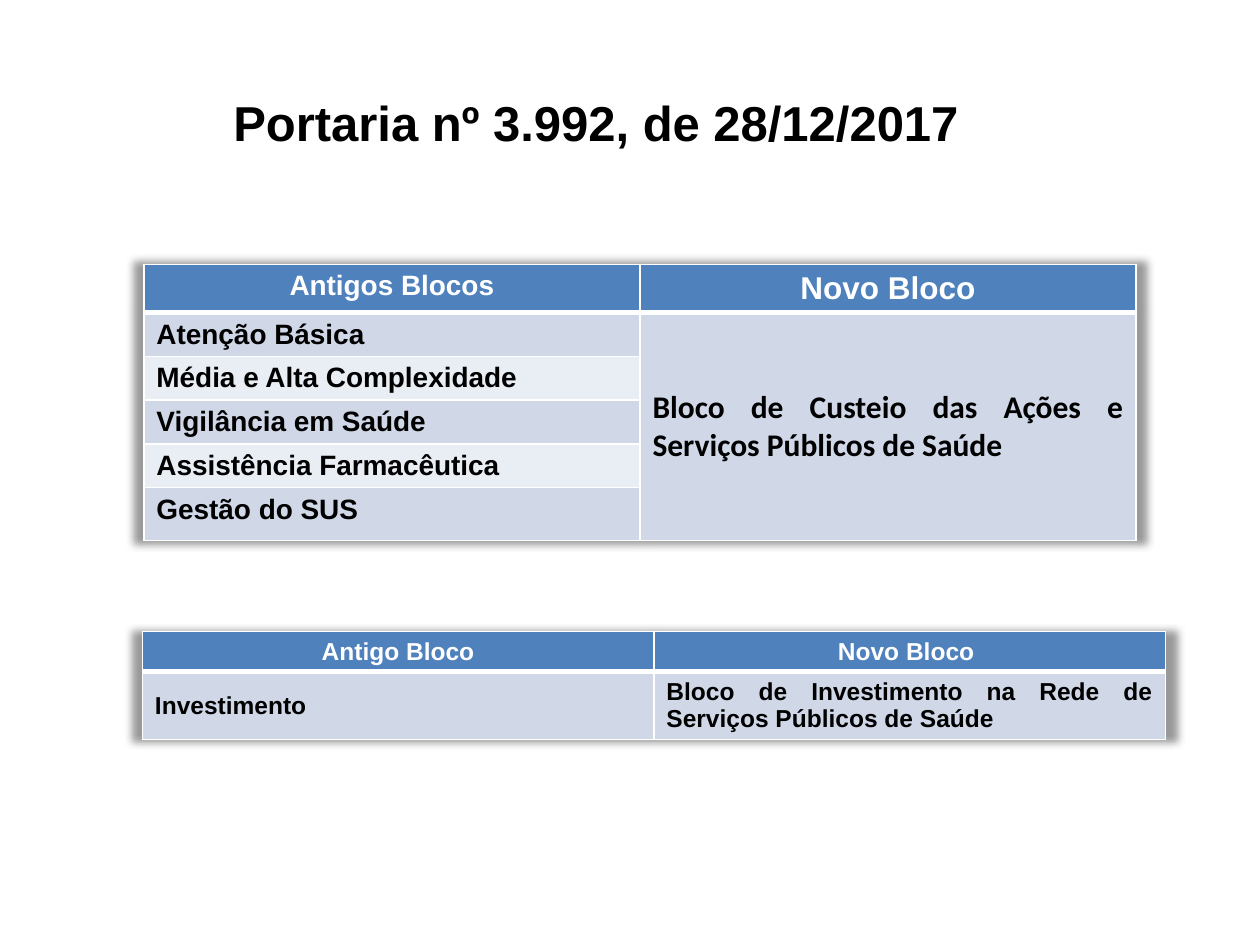
from lxml.etree import SubElement
from pptx import Presentation
from pptx.dml.color import RGBColor
from pptx.enum.text import MSO_ANCHOR, PP_ALIGN
from pptx.oxml import parse_xml
from pptx.oxml.ns import qn
from pptx.util import Cm, Pt

WHITE = RGBColor(0xFF, 0xFF, 0xFF)
BLACK = RGBColor(0x00, 0x00, 0x00)
HEADER_BLUE = RGBColor(0x4F, 0x81, 0xBD)
BAND_DARK = RGBColor(0xD0, 0xD8, 0xE8)
BAND_LIGHT = RGBColor(0xE9, 0xED, 0xF4)

TABLE_SHADOW = (
    '<a:effectLst xmlns:a="http://schemas.openxmlformats.org/drawingml/2006/main">'
    '<a:outerShdw blurRad="63500" sx="102000" sy="102000" algn="ctr" rotWithShape="0">'
    '<a:srgbClr val="000000"><a:alpha val="40000"/></a:srgbClr>'
    '</a:outerShdw></a:effectLst>'
)


def format_text(paragraph, size, color, align=PP_ALIGN.LEFT, font="Arial"):
    paragraph.alignment = align
    for span in paragraph.runs:
        span.font.name = font
        span.font.size = Pt(size)
        span.font.bold = True
        span.font.color.rgb = color


def set_borders(cell, top, bottom):
    """White cell borders; top and bottom widths in points."""
    properties = cell._tc.get_or_add_tcPr()
    for side, width in (("L", 1), ("R", 1), ("T", top), ("B", bottom)):
        line = SubElement(properties, qn(f"a:ln{side}"), w=str(Pt(width)))
        fill = SubElement(line, qn("a:solidFill"))
        SubElement(fill, qn("a:srgbClr"), val=str(WHITE))


def add_title(page, text):
    title = page.shapes.title
    title.left, title.top = Cm(4.45), Cm(1.73)
    title.width, title.height = Cm(15.29), Cm(1.45)
    title.text_frame.text = text
    title.text_frame.word_wrap = False
    format_text(title.text_frame.paragraphs[0], 28, BLACK)


def add_block_table(page, left, top, column_width, heights, rows, size):
    """Two-column table with a blue header row and banded body rows."""
    frame = page.shapes.add_table(
        len(rows), 2, Cm(left), Cm(top), Cm(2 * column_width), Cm(sum(heights)))
    table = frame.table
    table._tbl.tblPr.insert(0, parse_xml(TABLE_SHADOW))
    for column in table.columns:
        column.width = Cm(column_width)

    for index, (height, texts) in enumerate(zip(heights, rows)):
        table.rows[index].height = Cm(height)
        header = index == 0
        band = BAND_DARK if index % 2 else BAND_LIGHT
        for column, text in enumerate(texts):
            cell = table.cell(index, column)
            set_borders(cell, 3 if index == 1 else 1, 3 if header else 1)
            cell.fill.solid()
            cell.fill.fore_color.rgb = HEADER_BLUE if header else band
            cell.text_frame.text = text
            if header:
                align = PP_ALIGN.CENTER
            else:
                align = PP_ALIGN.JUSTIFY if column else PP_ALIGN.LEFT
            format_text(cell.text_frame.paragraphs[0], size,
                        WHITE if header else BLACK, align)
    table.cell(1, 0).vertical_anchor = MSO_ANCHOR.MIDDLE
    return table


def main():
    deck = Presentation()
    deck.slide_width, deck.slide_height = Cm(25.4), Cm(19.05)
    page = deck.slides.add_slide(deck.slide_layouts[5])
    add_title(page, "Portaria nº 3.992, de 28/12/2017")

    # Funding blocks merged into one
    funding = add_block_table(
        page, 2.9, 5.33, 10, [0.97] + [0.88] * 4 + [1.07],
        [("Antigos Blocos", "Novo Bloco"),
         ("Atenção Básica", "Bloco de Custeio das Ações e Serviços Públicos de Saúde"),
         ("Média e Alta Complexidade", ""),
         ("Vigilância em Saúde", ""),
         ("Assistência Farmacêutica", ""),
         ("Gestão do SUS", "")], 16)
    new_block = funding.cell(1, 1)
    new_block.merge(funding.cell(5, 1))
    new_block.vertical_anchor = MSO_ANCHOR.MIDDLE
    format_text(new_block.text_frame.paragraphs[0], 18, BLACK, PP_ALIGN.JUSTIFY, "Calibri")
    format_text(funding.cell(0, 1).text_frame.paragraphs[0], 18, WHITE, PP_ALIGN.CENTER)

    # Investment block
    add_block_table(
        page, 2.87, 12.73, 10.31, [0.8, 1.37],
        [("Antigo Bloco", "Novo Bloco "),
         ("Investimento", "Bloco de Investimento na Rede de Serviços Públicos de Saúde")], 14)

    deck.save("out.pptx")


if __name__ == "__main__":
    main()
